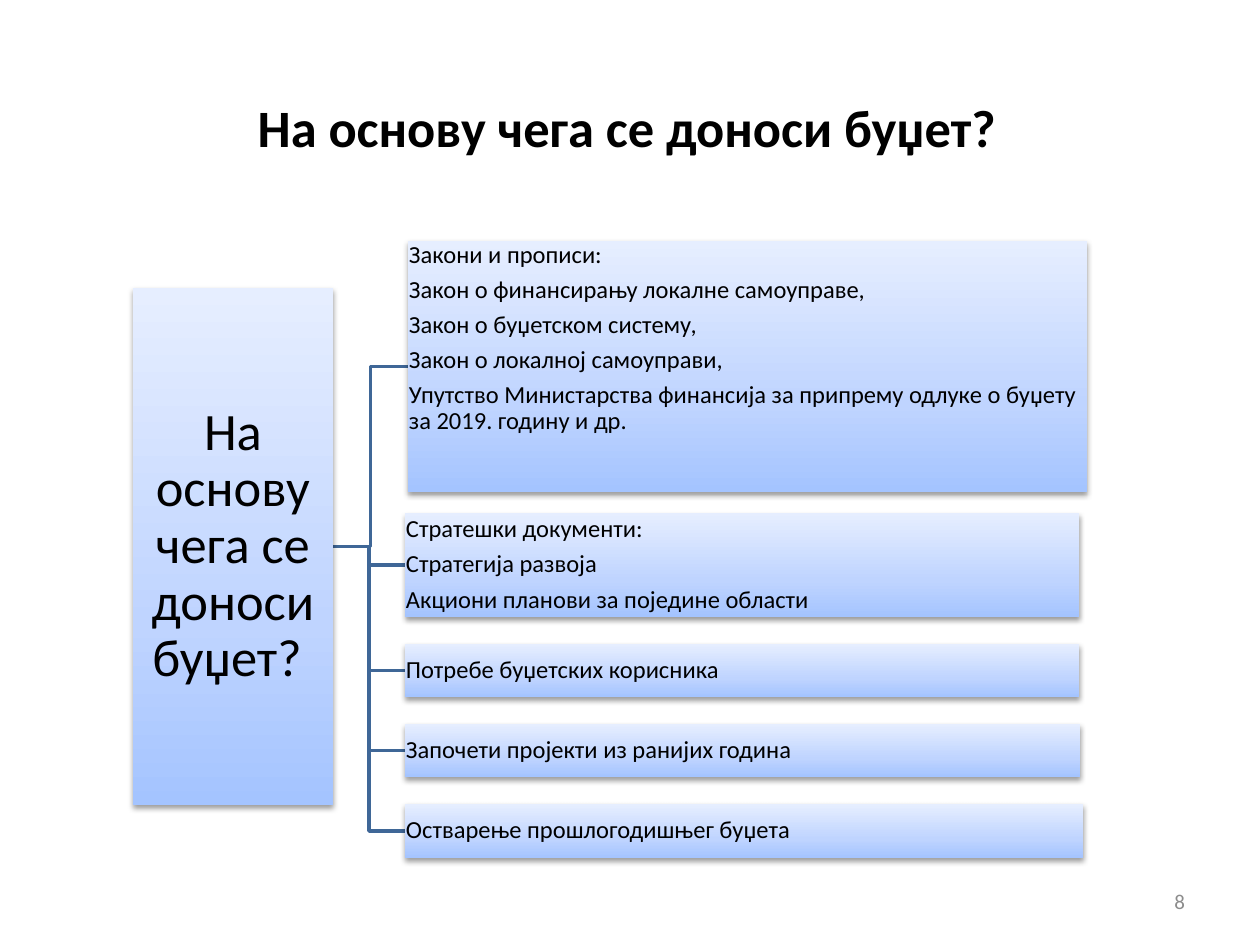
from lxml.etree import SubElement
from pptx import Presentation
from pptx.dml.color import RGBColor
from pptx.enum.shapes import MSO_SHAPE
from pptx.enum.text import MSO_ANCHOR, PP_ALIGN
from pptx.oxml import parse_xml
from pptx.oxml.ns import nsdecls, qn
from pptx.util import Emu, Pt

SCALE = 914400 / 126
FONT = "Calibri"
COLORS = {"text": "000000", "number": "8C8C8C", "line": "3F6797",
          "low": "A4C4FF", "mid": "BFD4FF", "high": "E6EEFF"}
TITLE = "На основу чега се доноси буџет?"
ROOT = (133, 288, 200, 517)
BRANCHES = [
    ((408, 241, 679, 251), MSO_ANCHOR.TOP, [
        "Закони и прописи:",
        "Закон о финансирању локалне самоуправе,",
        "Закон о буџетском систему,",
        "Закон о локалној самоуправи,",
        "Упутство Министарства финансија за припрему одлуке о буџету "
        "за 2019. годину и др."]),
    ((405, 513, 674, 104), MSO_ANCHOR.MIDDLE, [
        "Стратешки документи:",
        "Стратегија развоја",
        "Акциони планови за поједине области"]),
    ((405, 644, 674, 53), MSO_ANCHOR.MIDDLE, ["Потребе буџетских корисника"]),
    ((405, 724, 675, 53), MSO_ANCHOR.MIDDLE,
     ["Започети пројекти из ранијих година"]),
    ((405, 804, 678, 54), MSO_ANCHOR.MIDDLE,
     ["Остварење прошлогодишњег буџета"]),
]


def px(n):
    return Emu(round(n * SCALE))


def color(name):
    return RGBColor.from_string(COLORS[name])


def write(shape, lines, size, align, anchor, inset, tint="text", bold=False,
          dense=False):
    frame = shape.text_frame
    frame.word_wrap = True
    frame.vertical_anchor = anchor
    frame.margin_left = frame.margin_right = px(inset)
    frame.margin_top = frame.margin_bottom = px(inset)
    for i, line in enumerate(lines):
        para = frame.paragraphs[0] if i == 0 else frame.add_paragraph()
        para.text = line
        para.alignment = align
        if dense:
            para.line_spacing = 0.9
            para.space_after = Pt(size * 0.35)
        font = para.font
        font.name, font.size, font.bold = FONT, Pt(size), bold
        font.color.rgb = color(tint)


def add_label(slide, box, text, size, align, **look):
    label = slide.shapes.add_textbox(*map(px, box))
    write(label, [text], size, align, MSO_ANCHOR.MIDDLE, 12, **look)


def shade(shape):
    """Give the shape an upward gradient and a soft shadow below it."""
    props = shape._element.spPr
    stops = "".join(
        f'<a:gs pos="{pos}"><a:srgbClr val="{COLORS[name]}"/></a:gs>'
        for pos, name in ((0, "low"), (35000, "mid"), (100000, "high")))
    fill = parse_xml(
        f'<a:gradFill {nsdecls("a")} rotWithShape="1"><a:gsLst>{stops}</a:gsLst>'
        '<a:lin ang="16200000" scaled="0"/></a:gradFill>')
    props.find(qn("a:prstGeom")).addnext(fill)
    shape.line.fill.background()
    shape.shadow.inherit = False
    glow = SubElement(props.find(qn("a:effectLst")), qn("a:outerShdw"),
                      blurRad=str(Pt(3.1)), dist=str(Pt(1.6)),
                      dir="5400000", rotWithShape="0")
    tone = SubElement(glow, qn("a:srgbClr"), val=COLORS["text"])
    SubElement(tone, qn("a:alpha"), val="38000")


def add_box(slide, box, lines, size, align, anchor, inset):
    shape = slide.shapes.add_shape(MSO_SHAPE.RECTANGLE, *map(px, box))
    shade(shape)
    write(shape, lines, size, align, anchor, inset, dense=True)


def add_elbow(slide, box):
    """Link the right side of the root to the left side of a box."""
    left, top, wide, high = ROOT
    x1, y1 = left + wide, top + high / 2
    x2, y2 = box[0], box[1] + box[3] / 2
    mid = (x1 + x2) / 2
    path = slide.shapes.build_freeform(px(x1), px(y1))
    path.add_line_segments(
        [(px(x), px(y)) for x, y in ((mid, y1), (mid, y2), (x2, y2))],
        close=False)
    elbow = path.convert_to_shape()
    elbow.fill.background()
    elbow.line.color.rgb = color("line")
    elbow.line.width = Pt(2)
    elbow.shadow.inherit = False


def main():
    deck = Presentation()
    deck.slide_width, deck.slide_height = px(1260), px(945)
    slide = deck.slides.add_slide(deck.slide_layouts[6])

    add_label(slide, (60, 68, 1134, 117), TITLE, 30, PP_ALIGN.CENTER, bold=True)
    add_label(slide, (903, 876, 294, 50), "8", 12, PP_ALIGN.RIGHT, tint="number")
    for box, _, _ in reversed(BRANCHES):
        add_elbow(slide, box)
    add_box(slide, ROOT, [TITLE + " "], 30, PP_ALIGN.CENTER,
            MSO_ANCHOR.MIDDLE, 2)
    for box, anchor, lines in BRANCHES:
        add_box(slide, box, lines, 14, PP_ALIGN.LEFT, anchor, 1)
    deck.save("out.pptx")


if __name__ == "__main__":
    main()
